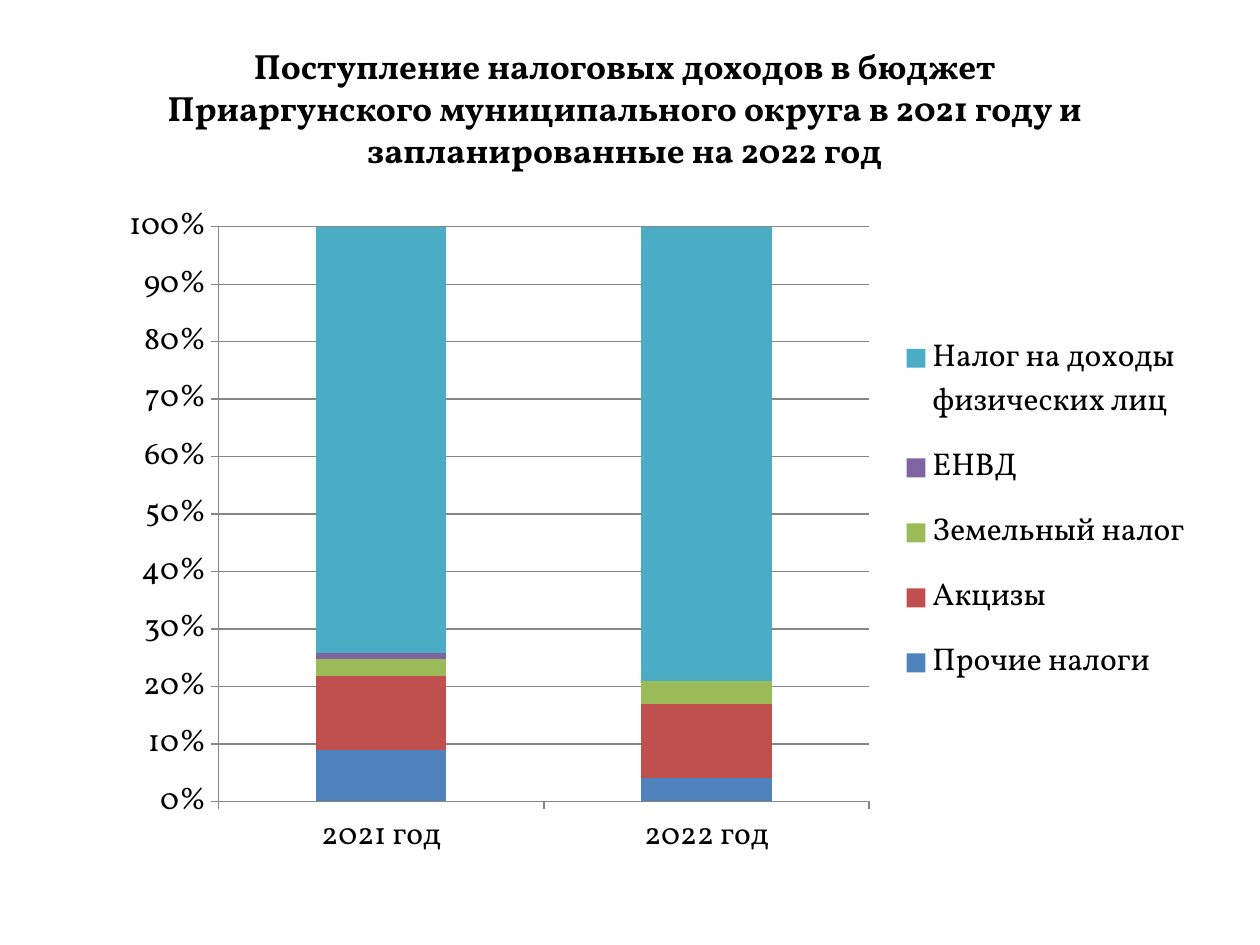
import pptx
import pptx.chart.data
import pptx.dml.color
import pptx.enum.chart
import pptx.enum.text
import pptx.oxml
import pptx.oxml.ns
import pptx.util

Pt = pptx.util.Pt
FONT = "Vollkorn"
BLACK = "000000"
GREY = "868686"
TITLE = ("Поступление налоговых доходов в бюджет Приаргунского муниципального "
         "округа в 2021 году и запланированные на 2022 год")
YEARS = ["2021 год", "2022 год"]
TAXES = [
    ("Прочие налоги", (9, 4), "4F81BD"),
    ("Акцизы", (13, 13), "C0504D"),
    ("Земельный налог", (3, 4), "9BBB59"),
    ("ЕНВД", (1, 0), "8064A2"),
    ("Налог на доходы физических лиц", (75, 79), "4BACC6"),
]
TITLE_PLACE = (84, 22, 546, 80)
CHART_PLACE = (62, 110, 630, 391)
PLOT_LAYOUT = (0.1, 0.05, 0.59, 0.84)
LEGEND_LAYOUT = (0.71, 0.18, 0.28, 0.57)


def colour(value):
    return pptx.dml.color.RGBColor.from_string(value)


def format_font(font, size, bold=False):
    font.name = FONT
    font.size = Pt(size)
    font.bold = bold
    font.color.rgb = colour(BLACK)


def write_text(shape, text, size, bold=False, align=None):
    frame = shape.text_frame
    frame.word_wrap = True
    frame.auto_size = pptx.enum.text.MSO_AUTO_SIZE.NONE
    frame.vertical_anchor = pptx.enum.text.MSO_ANCHOR.TOP
    para = frame.paragraphs[0]
    para.alignment = align
    span = para.add_run()
    span.text = text
    format_font(span.font, size, bold)


def place_part(element, before, layout, inner=False):
    for old in element.findall(pptx.oxml.ns.qn("c:layout")):
        element.remove(old)
    target = '<c:layoutTarget val="inner"/>' if inner else ""
    modes = "".join(f'<c:{axis}Mode val="edge"/>' for axis in "xy")
    values = "".join(f'<c:{key} val="{value}"/>' for key, value in zip("xywh", layout))
    node = pptx.oxml.parse_xml(
        f'<c:layout {pptx.oxml.ns.nsdecls("c")}><c:manualLayout>'
        f"{target}{modes}{values}</c:manualLayout></c:layout>")
    element.insert(before, node)


def add_tax_chart(page):
    data = pptx.chart.data.CategoryChartData(number_format="General")
    data.categories = YEARS
    for name, values, _ in TAXES:
        data.add_series(name, values)
    chart = page.shapes.add_chart(
        pptx.enum.chart.XL_CHART_TYPE.COLUMN_STACKED_100,
        *map(Pt, CHART_PLACE), data).chart
    chart.has_title = False
    format_font(chart.font, 18)

    plot = chart.plots[0]
    plot.gap_width = 150
    plot.overlap = 100
    plot.vary_by_categories = False
    for series, (_, _, fill) in zip(plot.series, TAXES):
        series.format.fill.solid()
        series.format.fill.fore_color.rgb = colour(fill)

    values = chart.value_axis
    values.minimum_scale = 0
    values.maximum_scale = 1
    values.major_unit = 0.1
    values.has_major_gridlines = True
    values.tick_labels.number_format = "0%"
    values.tick_labels.number_format_is_linked = False
    for axis in (values, chart.category_axis):
        axis.major_tick_mark = pptx.enum.chart.XL_TICK_MARK.OUTSIDE
        axis.format.line.color.rgb = colour(GREY)
        axis.format.line.width = Pt(0.75)
    values.major_gridlines.format.line.color.rgb = colour(GREY)
    values.major_gridlines.format.line.width = Pt(0.75)

    chart.has_legend = True
    legend = chart.legend
    legend.position = pptx.enum.chart.XL_LEGEND_POSITION.RIGHT
    legend.include_in_layout = False
    format_font(legend.font, 18)
    area = chart.element.find(".//" + pptx.oxml.ns.qn("c:plotArea"))
    place_part(area, 0, PLOT_LAYOUT, inner=True)
    place_part(legend._element, 1, LEGEND_LAYOUT)


def main():
    deck = pptx.Presentation()
    deck.slide_width, deck.slide_height = Pt(720), Pt(540)
    page = deck.slides.add_slide(deck.slide_layouts[5])
    title = page.shapes.title
    title.left, title.top, title.width, title.height = map(Pt, TITLE_PLACE)
    write_text(title, TITLE, 20, bold=True, align=pptx.enum.text.PP_ALIGN.CENTER)
    add_tax_chart(page)
    deck.save("out.pptx")


if __name__ == "__main__":
    main()
